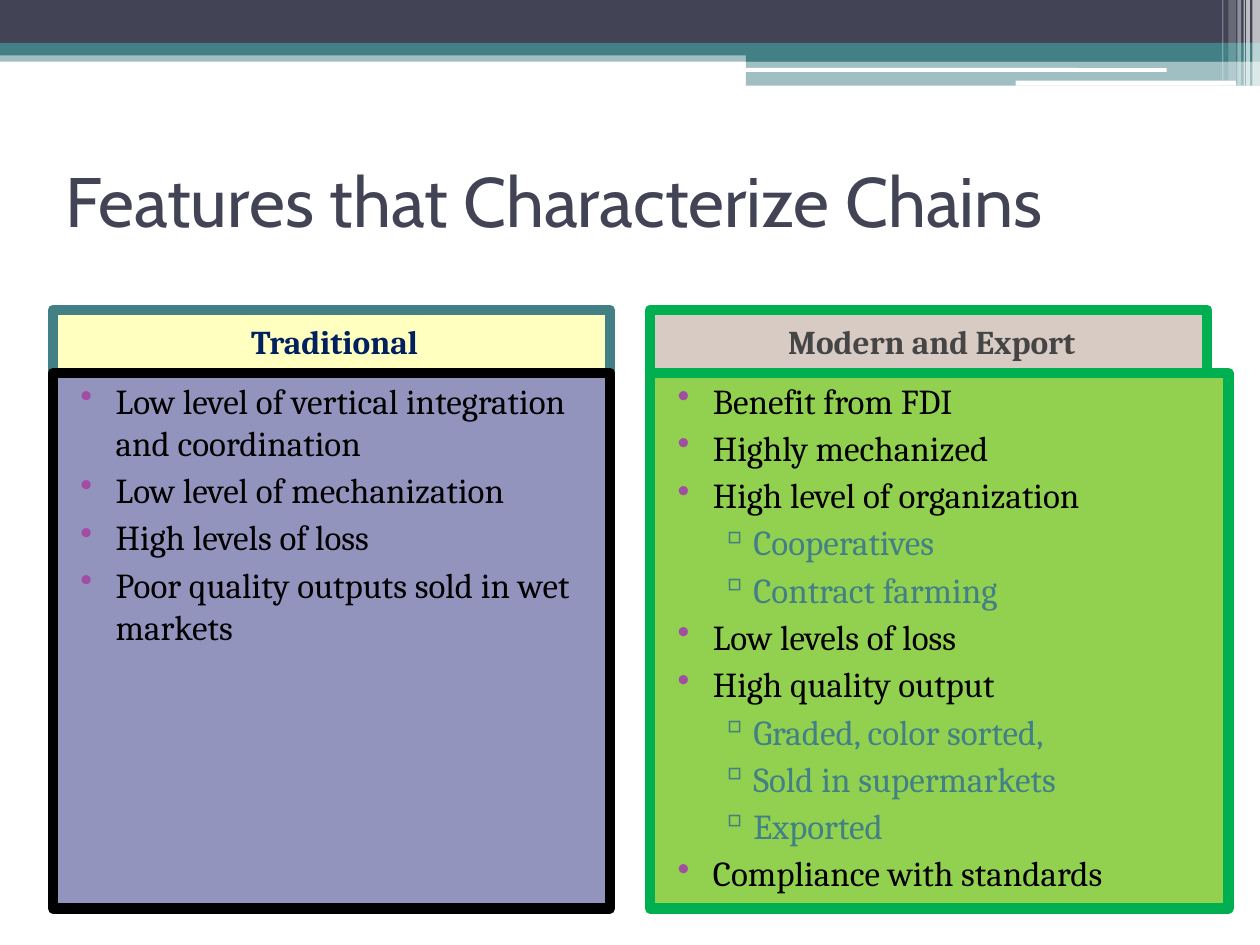
import pptx
import pptx.util
from lxml import etree
from pptx.dml.color import RGBColor
from pptx.enum.shapes import MSO_SHAPE
from pptx.enum.text import MSO_ANCHOR, PP_ALIGN
from pptx.oxml.ns import qn
from pptx.util import Inches, Pt

COLORS = {
    "white": "FFFFFF", "black": "000000", "slate": "424456", "teal": "438086",
    "purple": "A04DA3", "yellow": "FFFF00", "brown": "623217", "navy": "002060",
    "gray": "454545", "lavender": "9394BE", "lime": "92D050", "green": "00B050",
}

# left, top, width, height, color, opacity in percent
BANDS = [
    (0, 0.4, 10, 0.09, "teal", 50),
    (0, 0, 10, 0.34, "slate", 100),
    (0, 0.34, 10, 0.1, "teal", 100),
    (5.92, 0.39, 4.08, 0.1, "teal", 100),
    (5.92, 0.48, 4.08, 0.2, "teal", 50),
]
HIGHLIGHTS = [(5.91, 0.54, 3.35, 0.03), (8.06, 0.64, 1.75, 0.04)]
# left, width, height, opacity in percent
STRIPES = [
    (9.94, 0.06, 0.68, 65), (9.89, 0.03, 0.68, 65), (9.87, 0.01, 0.68, 60),
    (9.82, 0.03, 0.68, 40), (9.75, 0.06, 0.64, 20), (9.7, 0.01, 0.64, 30),
]

# level: bullet, bullet color, text color, left margin, hanging indent
LEVELS = [
    ("•", "purple", "black", 0.4, -0.28),
    ("▫", "teal", "teal", 0.72, -0.27),
]
TRADITIONAL = [
    (0, "Low level of vertical integration and coordination"),
    (0, "Low level of mechanization"),
    (0, "High levels of loss"),
    (0, "Poor quality outputs sold in wet markets"),
]
MODERN = [
    (0, "Benefit from FDI"),
    (0, "Highly mechanized"),
    (0, "High level of organization"),
    (1, "Cooperatives"),
    (1, "Contract farming"),
    (0, "Low levels of loss"),
    (0, "High quality output"),
    (1, "Graded, color sorted,"),
    (1, "Sold in supermarkets"),
    (1, "Exported"),
    (0, "Compliance with standards"),
]


def rgb(name):
    return RGBColor.from_string(COLORS[name])


def add_block(slide, box, color, opacity=100, kind=MSO_SHAPE.RECTANGLE):
    """Add a filled shape without outline; box is left, top, width, height."""
    shape = slide.shapes.add_shape(kind, *map(Inches, box))
    shape.shadow.inherit = False
    shape.fill.solid()
    shape.fill.fore_color.rgb = rgb(color)
    if opacity < 100:
        fill_color = shape._element.spPr.find(qn("a:solidFill"))[0]
        etree.SubElement(fill_color, qn("a:alpha"), val=str(opacity * 1000))
    shape.line.fill.background()
    return shape


def add_panel(slide, box, color, border, opacity=100):
    """Add a block with a thick, round-cornered border."""
    shape = add_block(slide, box, color, opacity)
    shape.line.color.rgb = rgb(border)
    shape.line.width = Pt(6)
    etree.SubElement(shape._element.spPr.find(qn("a:ln")), qn("a:round"))
    shape.text_frame.word_wrap = True
    return shape


def style_paragraph(paragraph, size, color, font="Cambria", bold=False):
    paragraph.font.size = Pt(size)
    paragraph.font.name = font
    paragraph.font.bold = bold
    paragraph.font.color.rgb = rgb(color)


def set_indent(paragraph, margin, indent=0):
    properties = paragraph._p.get_or_add_pPr()
    properties.set("marL", str(Inches(margin)))
    properties.set("indent", str(Inches(indent)))
    return properties


def set_bullet(paragraph, character, color, margin, indent):
    properties = set_indent(paragraph, margin, indent)
    bullet_color = etree.Element(qn("a:buClr"))
    etree.SubElement(bullet_color, qn("a:srgbClr"), val=COLORS[color])
    bullet = etree.Element(qn("a:buChar"), char=character)
    run_defaults = properties.find(qn("a:defRPr"))
    run_defaults.addprevious(bullet_color)
    run_defaults.addprevious(bullet)


def add_title(slide, text):
    title = slide.shapes.add_textbox(*map(Inches, (0.42, 1, 9.17, 1.17)))
    frame = title.text_frame
    frame.word_wrap = True
    frame.vertical_anchor = MSO_ANCHOR.MIDDLE
    frame.text = text
    style_paragraph(frame.paragraphs[0], 40, "slate", font="Cabin")


def add_heading(slide, left, text, fill, border, text_color):
    panel = add_panel(slide, (left, 2.46, 4.42, 0.5), fill, border, opacity=25)
    panel.text_frame.vertical_anchor = MSO_ANCHOR.MIDDLE
    panel.text_frame.text = text
    paragraph = panel.text_frame.paragraphs[0]
    paragraph.alignment = PP_ALIGN.CENTER
    paragraph.space_before = Pt(3)
    style_paragraph(paragraph, 19, text_color, bold=True)
    set_indent(paragraph, 0.05)


def add_list(slide, left, width, items, fill, border):
    panel = add_panel(slide, (left, 2.96, width, 4.25), fill, border)
    frame = panel.text_frame
    frame.vertical_anchor = MSO_ANCHOR.TOP
    frame.text = "\n".join(text for _, text in items)
    for paragraph, (level, _) in zip(frame.paragraphs, items):
        character, bullet_color, text_color, margin, indent = LEVELS[level]
        paragraph.level = level
        paragraph.alignment = PP_ALIGN.LEFT
        paragraph.space_before = Pt(3)
        style_paragraph(paragraph, 20, text_color)
        set_bullet(paragraph, character, bullet_color, margin, indent)


def add_banner(slide):
    for *box, color, opacity in BANDS:
        add_block(slide, box, color, opacity)
    for box in HIGHLIGHTS:
        add_block(slide, box, "white", kind=MSO_SHAPE.ROUNDED_RECTANGLE)
    for left, width, height, opacity in STRIPES:
        add_block(slide, (left, 0, width, height), "white", opacity)


def main():
    presentation = pptx.Presentation()
    presentation.slide_width = Inches(10)
    presentation.slide_height = Inches(7.5)
    slide = presentation.slides.add_slide(presentation.slide_layouts[6])

    add_banner(slide)
    add_title(slide, "Features that Characterize Chains")
    add_heading(slide, 0.42, "Traditional", "yellow", "teal", "navy")
    add_heading(slide, 5.16, "Modern and Export", "brown", "green", "gray")
    add_list(slide, 0.42, 4.42, TRADITIONAL, "lavender", "black")
    add_list(slide, 5.16, 4.59, MODERN, "lime", "green")
    presentation.save("out.pptx")


if __name__ == "__main__":
    main()
